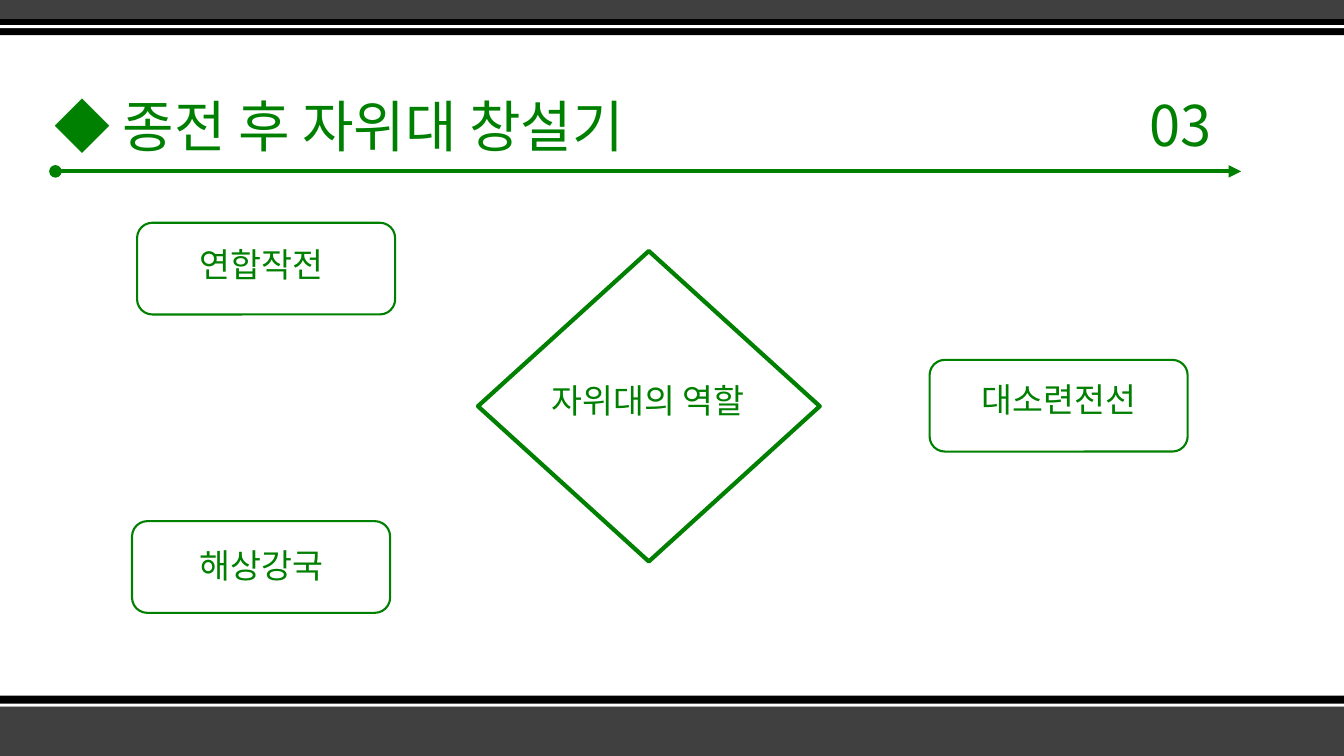
import pptx
import pptx.dml.color
import pptx.enum.shapes
import pptx.enum.text
import pptx.oxml
import pptx.oxml.ns
import pptx.util

Inches = pptx.util.Inches
Pt = pptx.util.Pt
Shape = pptx.enum.shapes.MSO_SHAPE
Align = pptx.enum.text.PP_ALIGN
Anchor = pptx.enum.text.MSO_ANCHOR

FONT = "Noto Sans CJK KR"
COLORS = {"green": "008000", "gray": "404040", "black": "000000", "white": "FFFFFF"}
PAGE_WIDTH, PAGE_HEIGHT = 13.33, 7.5
BANDS = [  # top, height, colour
    (7, 0.5, "gray"), (6.9, 0.11, "black"), (6.98, 0.03, "white"),
    (0, 0.19, "gray"), (0.19, 0.16, "black"), (0.25, 0.03, "white"),
]
LABEL_SIZE = (2.44, 0.55)
FRAME_SIZE = (2.56, 0.91)
ROLES = [  # text, label position, frame position
    ("연합작전", (1.37, 2.42), (1.36, 2.21)),
    ("해상강국", (1.37, 5.4), (1.31, 5.17)),
    ("대소련전선", (9.28, 3.75), (9.22, 3.57)),
]


def color(name):
    return pptx.dml.color.RGBColor.from_string(COLORS[name])


def add_element(parent, tag, **attributes):
    element = pptx.oxml.parse_xml(f"<a:{tag} {pptx.oxml.ns.nsdecls('a')}/>")
    for name, value in attributes.items():
        element.set(name, value)
    parent.append(element)


def add_band(page, top, height, fill):
    band = page.shapes.add_shape(
        Shape.RECTANGLE, 0, Inches(top), Inches(PAGE_WIDTH), Inches(height))
    band.shadow.inherit = False
    band.fill.solid()
    band.fill.fore_color.rgb = color(fill)
    band.line.fill.background()


def add_frame(page, kind, position, size, width=1.5):
    """Draw an unfilled green outline."""
    frame = page.shapes.add_shape(kind, *map(Inches, position + size))
    frame.shadow.inherit = False
    frame.fill.background()
    frame.line.color.rgb = color("green")
    frame.line.width = Pt(width)


def add_text(page, text, position, size, points=24, align=Align.CENTER,
             anchor=Anchor.TOP, before=18, inset=0.1):
    box = page.shapes.add_textbox(*map(Inches, position + size))
    frame = box.text_frame
    frame.word_wrap = True
    frame.vertical_anchor = anchor
    frame.margin_left = Inches(inset)
    para = frame.paragraphs[0]
    para.alignment = align
    para.line_spacing = 0.9
    para.space_before = Pt(before)
    span = para.add_run()
    span.text = text
    span.font.size = Pt(points)
    span.font.name = FONT
    span.font.color.rgb = color("green")
    add_element(span.font._element, "ea", typeface=FONT)


def add_arrow(page, left, right, y):
    arrow = page.shapes.add_connector(
        pptx.enum.shapes.MSO_CONNECTOR.STRAIGHT,
        Inches(left), Inches(y), Inches(right), Inches(y))
    arrow.line.color.rgb = color("green")
    arrow.line.width = Pt(3)
    outline = arrow.line._get_or_add_ln()
    add_element(outline, "headEnd", type="oval")
    add_element(outline, "tailEnd", type="triangle")
    add_element(arrow._element.spPr, "effectLst")


def main():
    deck = pptx.Presentation()
    deck.slide_width = Inches(PAGE_WIDTH)
    deck.slide_height = Inches(PAGE_HEIGHT)
    page = deck.slides.add_slide(deck.slide_layouts[6])

    for band in BANDS:
        add_band(page, *band)

    add_text(page, "◆ 종전 후 자위대 창설기", (0.44, 0.84), (6.54, 0.79), points=40,
             align=Align.LEFT, anchor=Anchor.BOTTOM, before=0)
    add_text(page, "03", (11.18, 0.92), (1.39, 0.71), points=40,
             align=Align.LEFT, inset=0.22)
    add_arrow(page, 0.55, 12.31, 1.7)

    add_text(page, "자위대의 역할", (5.21, 3.76), LABEL_SIZE)
    add_frame(page, Shape.FLOWCHART_DECISION, (4.74, 2.49), (3.39, 3.08), width=3)
    for text, label_position, frame_position in ROLES:
        add_text(page, text, label_position, LABEL_SIZE)
        add_frame(page, Shape.ROUNDED_RECTANGLE, frame_position, FRAME_SIZE)

    deck.save("out.pptx")


if __name__ == "__main__":
    main()
